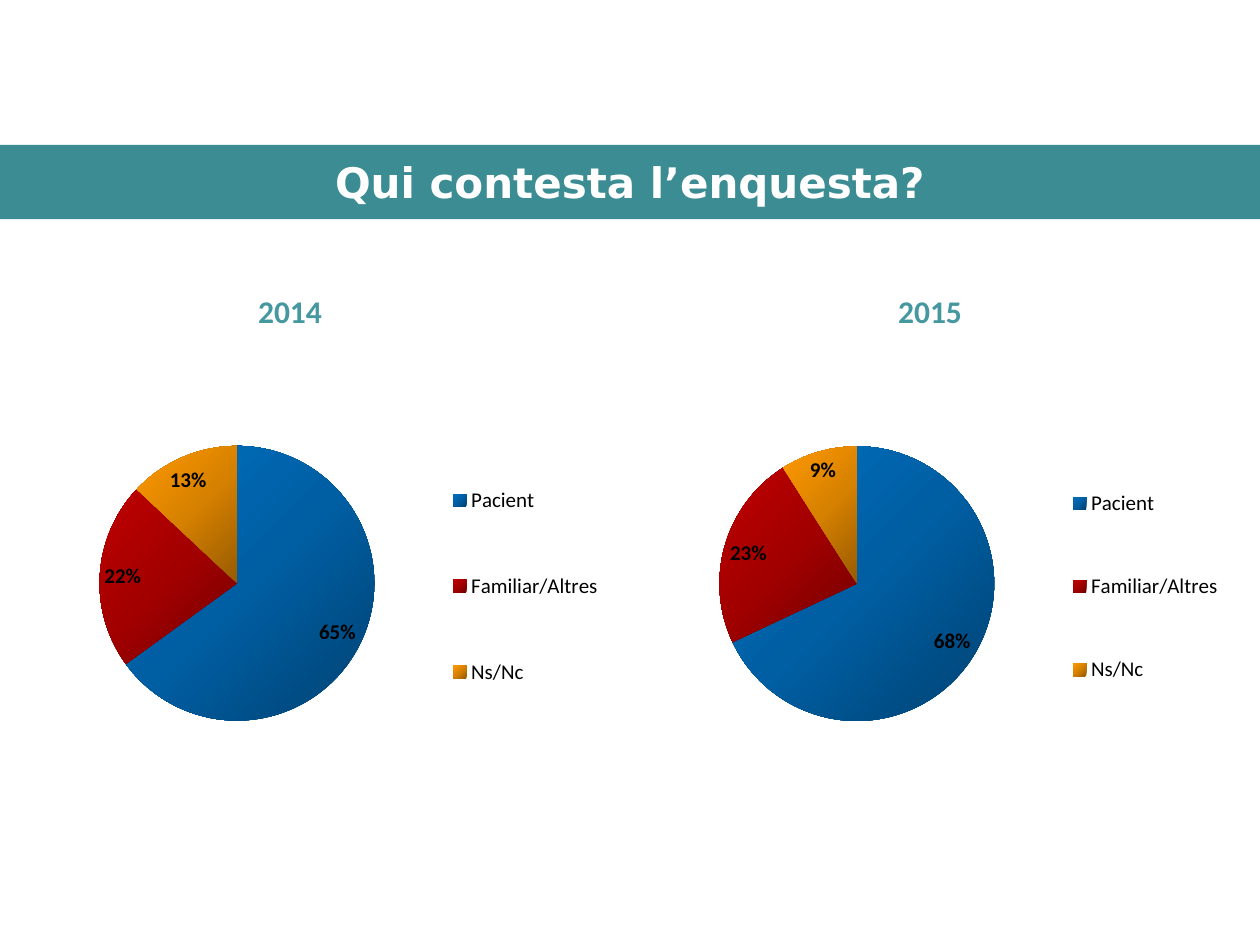
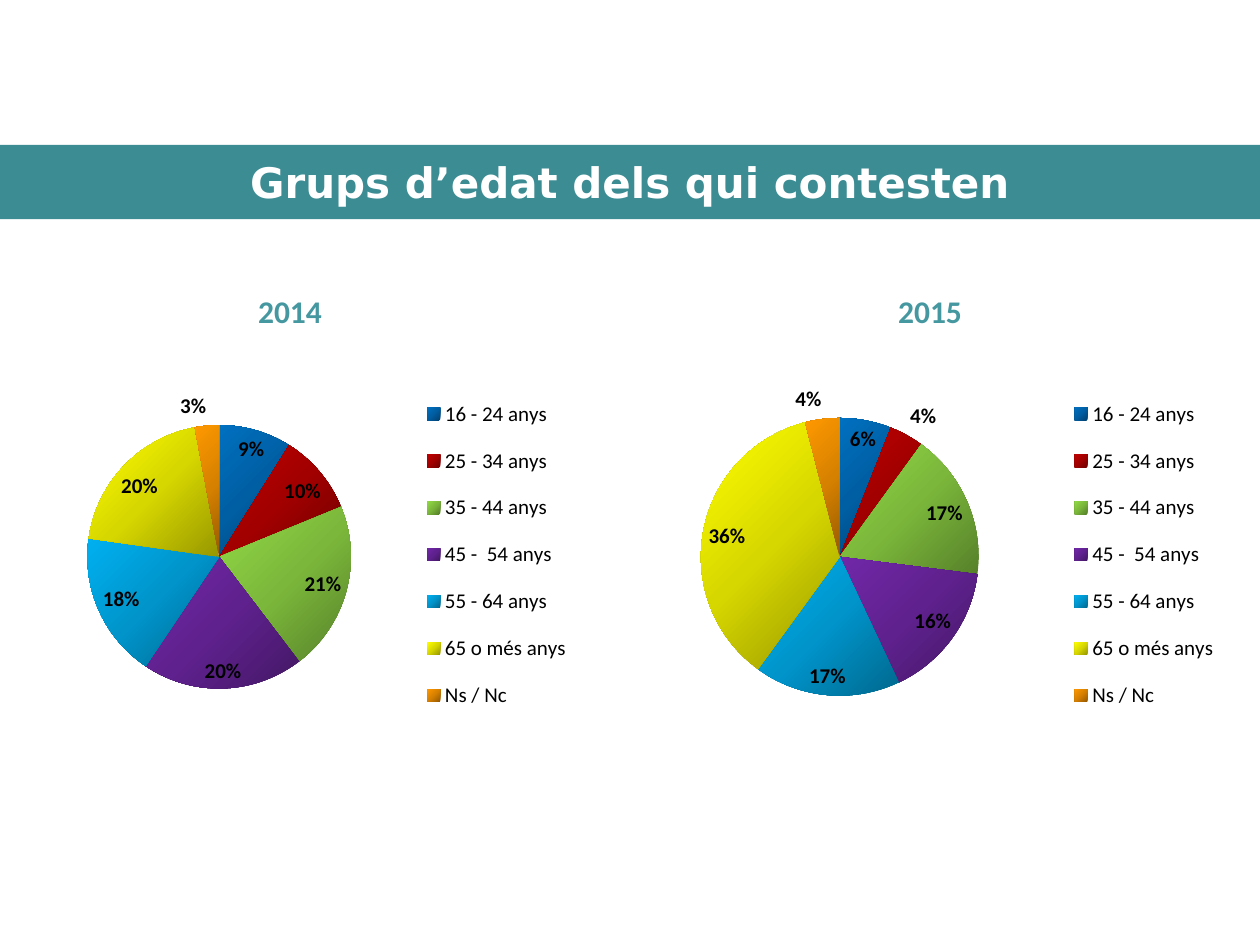
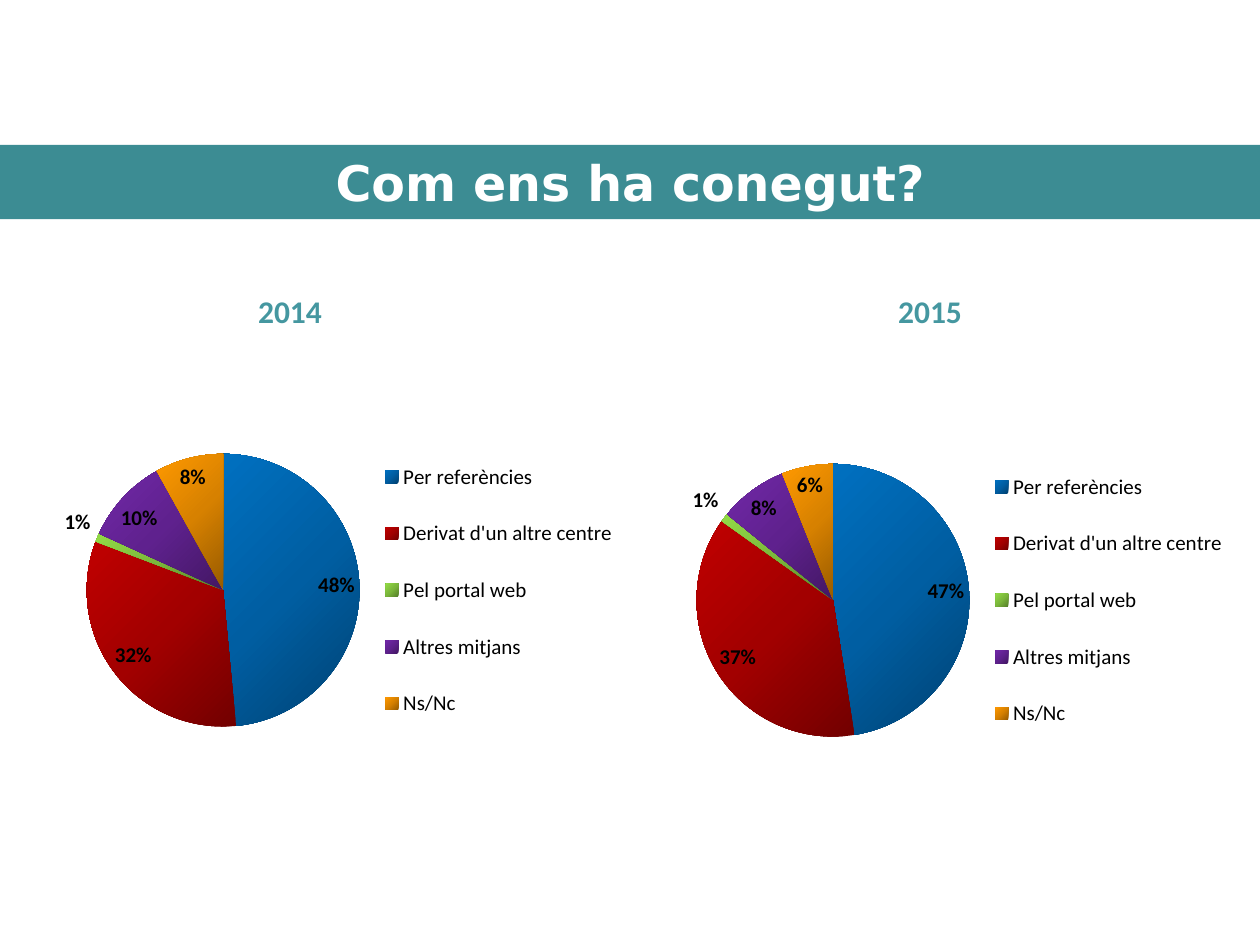
from dataclasses import dataclass

from pptx import Presentation
from pptx.chart.data import CategoryChartData
from pptx.dml.color import RGBColor
from pptx.enum.chart import XL_CHART_TYPE as ChartType
from pptx.enum.chart import XL_LABEL_POSITION as LabelPos
from pptx.enum.chart import XL_LEGEND_POSITION as LegendPos
from pptx.enum.text import MSO_ANCHOR, PP_ALIGN
from pptx.oxml import parse_xml
from pptx.oxml.ns import nsdecls
from pptx.util import Inches, Pt


@dataclass(frozen=True)
class Theme:
    band: str = "3C8C93"
    year: str = "4597A0"
    white: str = "FFFFFF"
    black: str = "000000"
    title_font: str = "DejaVu Sans"
    body_font: str = "Calibri"
    chart_font: str = "Arial"
    title_size: int = 24
    big_title_size: int = 28
    year_size: int = 18
    chart_size: int = 18
    label_size: int = 12


T = Theme()

# Slice gradients: dark, middle and light stop
BLUE = ("004272", "005EA2", "0070C0")
RED = ("720000", "A20000", "C00000")
GREEN = ("57812A", "7BB73B", "92DA46")
PURPLE = ("431764", "5F218E", "7128A8")
SKY = ("00688E", "0094CA", "00B0F0")
YELLOW = ("979700", "D7D700", "FFFF00")
ORANGE = ("975B00", "D78100", "FF9900")

BAND_BOX = (0, 1.15, 10, 0.59)
YEAR_BOXES = {"2014": (1.95, 2.27, 1.41, 0.4), "2015": (7.03, 2.27, 1.41, 0.4)}

# Boxes are in inches; plot and legend (x, y, w, h) are fractions of the chart.
# Each pie is (box, legend x, values).
SLIDES = [
    {
        "title": "Qui contesta l’enquesta?",
        "size": T.title_size,
        "slices": {"Pacient": BLUE, "Familiar/Altres": RED, "Ns/Nc": ORANGE},
        "plot": (0.09, 0.24, 0.49, 0.48),
        "legend": (0.22, 0.28, 0.53),
        "pies": [
            ((0.39, 2.34, 4.45, 4.77), 0.71, (65, 22, 13)),
            ((5.31, 2.42, 4.45, 4.61), 0.71, (68, 23, 9)),
        ],
    },
    {
        "title": "Grups d’edat dels qui contesten",
        "size": T.title_size,
        "slices": {
            "16 - 24 anys": BLUE,
            "25 - 34 anys": RED,
            "35 - 44 anys": GREEN,
            "45 -  54 anys": PURPLE,
            "55 - 64 anys": SKY,
            "65 o més anys": YELLOW,
            "Ns / Nc": ORANGE,
        },
        "plot": (0.12, 0.09, 0.47, 0.82),
        "legend": (0.1, 0.26, 0.79),
        "pies": [
            ((0.16, 2.66, 4.45, 3.52), 0.72, (9, 10, 21, 20, 18, 20, 3)),
            ((5, 2.66, 4.69, 3.52), 0.74, (6, 4, 17, 16, 17, 36, 4)),
        ],
    },
    {
        "title": "Com ens ha conegut?",
        "size": T.big_title_size,
        "slices": {
            "Per referències": BLUE,
            "Derivat d'un altre centre": RED,
            "Pel portal web": GREEN,
            "Altres mitjans": PURPLE,
            "Ns/Nc": ORANGE,
        },
        "plot": (0.14, 0.12, 0.44, 0.76),
        "legend": (0.18, 0.39, 0.64),
        "pies": [
            ((0, 2.73, 4.92, 3.91), 0.61, (48, 32, 1, 10, 8)),
            ((4.84, 2.81, 4.92, 3.91), 0.61, (47, 37, 1, 8, 6)),
        ],
    },
]


def inches(box):
    return [Inches(v) for v in box]


def set_font(font, name, size, color=T.black, bold=False):
    font.name = name
    font.size = Pt(size)
    font.bold = bold
    font.color.rgb = RGBColor.from_string(color)


def write(tf, text, align=PP_ALIGN.LEFT, anchor=MSO_ANCHOR.TOP, **fmt):
    tf.word_wrap = True
    tf.vertical_anchor = anchor
    p = tf.paragraphs[0]
    p.alignment = align
    r = p.add_run()
    r.text = text
    set_font(r.font, **fmt)


def add_title(s, text, size):
    title = s.shapes.title
    title.left, title.top, title.width, title.height = inches(BAND_BOX)
    title.fill.solid()
    title.fill.fore_color.rgb = RGBColor.from_string(T.band)
    write(title.text_frame, text, align=PP_ALIGN.CENTER, anchor=MSO_ANCHOR.MIDDLE,
          name=T.title_font, size=size, color=T.white, bold=True)


def manual_layout(box, inner=False):
    target = '<c:layoutTarget val="inner"/>' if inner else ""
    modes = "".join(f'<c:{k}Mode val="edge"/>' for k in "xy")
    sizes = "".join(f'<c:{k} val="{v}"/>' for k, v in zip("xywh", box))
    return parse_xml(f'<c:layout {nsdecls("c")}><c:manualLayout>{target}{modes}{sizes}'
                     "</c:manualLayout></c:layout>")


def gradient(stops):
    gs = "".join(f'<a:gs pos="{i * 50000}"><a:srgbClr val="{c}"/></a:gs>'
                 for i, c in enumerate(stops))
    return parse_xml(f'<a:gradFill {nsdecls("a")} rotWithShape="1"><a:gsLst>{gs}</a:gsLst>'
                     '<a:lin ang="13500000" scaled="1"/></a:gradFill>')


def add_pie(s, box, slices, values, plot_box, legend_box):
    data = CategoryChartData()
    data.categories = list(slices)
    data.add_series("Series 1", values)
    chart = s.shapes.add_chart(ChartType.PIE, *inches(box), data).chart
    chart.has_title = False
    set_font(chart.font, T.chart_font, T.chart_size)

    chart.has_legend = True
    legend = chart.legend
    legend.position = LegendPos.RIGHT
    legend.include_in_layout = False
    set_font(legend.font, T.body_font, T.label_size)

    plot = chart.plots[0]
    plot.vary_by_categories = True
    plot.has_data_labels = True
    labels = plot.data_labels
    labels.show_value = False
    labels.show_percentage = True
    labels.number_format = "0%"
    labels.number_format_is_linked = False
    labels.position = LabelPos.BEST_FIT
    set_font(labels.font, T.body_font, T.label_size, bold=True)

    for i in range(len(slices)):
        plot.series[0].points[i].format.line.fill.background()
    space = chart._chartSpace
    for sp_pr, stops in zip(space.xpath(".//c:dPt/c:spPr"), slices.values()):
        sp_pr.insert(0, gradient(stops))

    for old in space.xpath(".//c:plotArea/c:layout | .//c:legend/c:layout"):
        old.getparent().remove(old)
    space.xpath(".//c:plotArea")[0].insert(0, manual_layout(plot_box, inner=True))
    space.xpath(".//c:legendPos")[0].addnext(manual_layout(legend_box))


def main():
    prs = Presentation()
    prs.slide_width, prs.slide_height = Inches(10), Inches(7.5)
    title_only = prs.slide_layouts[5]
    for content in SLIDES:
        s = prs.slides.add_slide(title_only)
        add_title(s, content["title"], content["size"])
        for box, legend_x, values in content["pies"]:
            add_pie(s, box, content["slices"], values, content["plot"],
                    (legend_x, *content["legend"][:1], *content["legend"][1:]))
        for year, box in YEAR_BOXES.items():
            write(s.shapes.add_textbox(*inches(box)).text_frame, year,
                  name=T.body_font, size=T.year_size, color=T.year, bold=True)
    prs.save("out.pptx")


if __name__ == "__main__":
    main()
